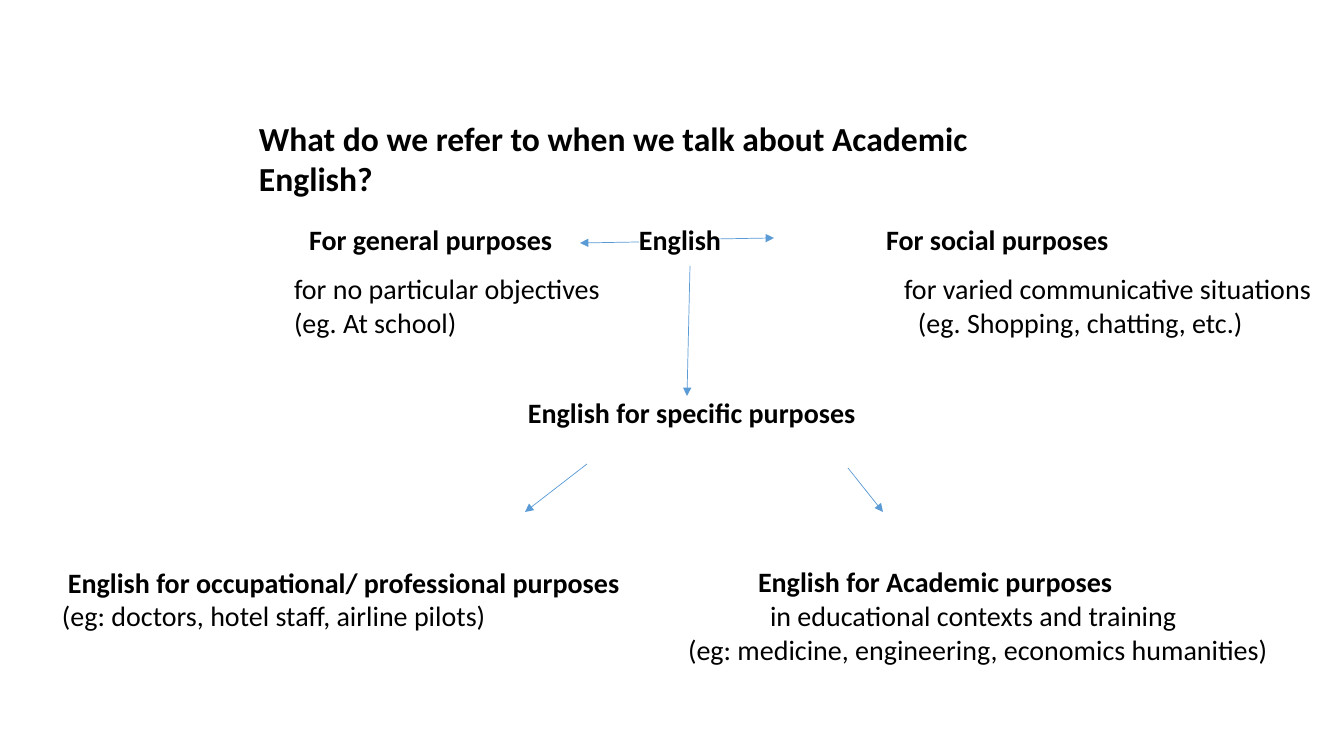
from lxml.etree import SubElement
from pptx import Presentation
from pptx.dml.color import RGBColor as Rgb
from pptx.enum.shapes import MSO_CONNECTOR as Conn
from pptx.oxml.ns import qn
from pptx.util import Pt

PX = 9071  # EMU in one px
SIZE = 1344, 756
FONT = "Calibri"
COLORS = {"text": "000000", "arrow": "5B9BD5"}
LINE = 34  # height of one 20 pt line

# x, y, width, font size, gap below heading, lines of (text, bold, indent)
LABELS = [
    (259, 118, 830, 24, 0, [
        ("What do we refer to when we talk about Academic English?", True, 0)]),
    (294, 222, 310, 20, 16, [
        ("For general purposes", True, 15),
        ("for no particular objectives", False, 0),
        ("(eg. At school)", False, 0)]),
    (639, 222, 84, 20, 0, [("English", True, 0)]),
    (886, 222, 430, 20, 16, [
        ("For social purposes", True, 0),
        ("for varied communicative situations", False, 18),
        ("(eg. Shopping, chatting, etc.)", False, 32)]),
    (528, 395, 330, 20, 0, [("English for specific purposes", True, 0)]),
    (62, 565, 560, 20, 0, [
        ("English for occupational/ professional purposes", True, 6),
        ("(eg: doctors, hotel staff, airline pilots)", False, 0)]),
    (688, 565, 582, 20, 0, [
        ("English for Academic purposes", True, 70),
        ("in educational contexts and training", False, 82),
        ("(eg: medicine, engineering, economics humanities)", False, 0)]),
]
# start x, start y, tip x, tip y
ARROWS = [
    (639, 242, 580, 243),
    (713, 239, 774, 238),
    (690, 266, 687, 396),
    (587, 464, 525, 512),
    (848, 468, 883, 512),
]


def emu(*px):
    return [n * PX for n in px]


def add_arrow(slide, ends):
    line = slide.shapes.add_connector(Conn.STRAIGHT, *emu(*ends))
    line.line.color.rgb = Rgb.from_string(COLORS["arrow"])
    line.line.width = Pt(0.5)
    SubElement(line.line._get_or_add_ln(), qn("a:tailEnd"), type="triangle")
    SubElement(line._element.spPr, qn("a:effectLst"))


def add_label(slide, x, y, width, size, gap, lines):
    high = LINE * len(lines) + gap
    frame = slide.shapes.add_textbox(*emu(x, y, width, high)).text_frame
    frame.word_wrap = False
    frame.margin_left = frame.margin_right = 0
    frame.margin_top = frame.margin_bottom = 0
    frame.text = "\n".join(text for text, _, _ in lines)
    for row, (par, (_, bold, indent)) in enumerate(zip(frame.paragraphs, lines)):
        par._p.get_or_add_pPr().set("marL", str(indent * PX))
        if row == 1 and gap:
            par.space_before = gap * PX
        font = par.runs[0].font
        font.name, font.size, font.bold = FONT, Pt(size), bold
        font.color.rgb = Rgb.from_string(COLORS["text"])


def main():
    deck = Presentation()
    deck.slide_width, deck.slide_height = emu(*SIZE)
    slide = deck.slides.add_slide(deck.slide_layouts[6])
    for ends in ARROWS:
        add_arrow(slide, ends)
    for label in LABELS:
        add_label(slide, *label)
    deck.save("out.pptx")


if __name__ == "__main__":
    main()
